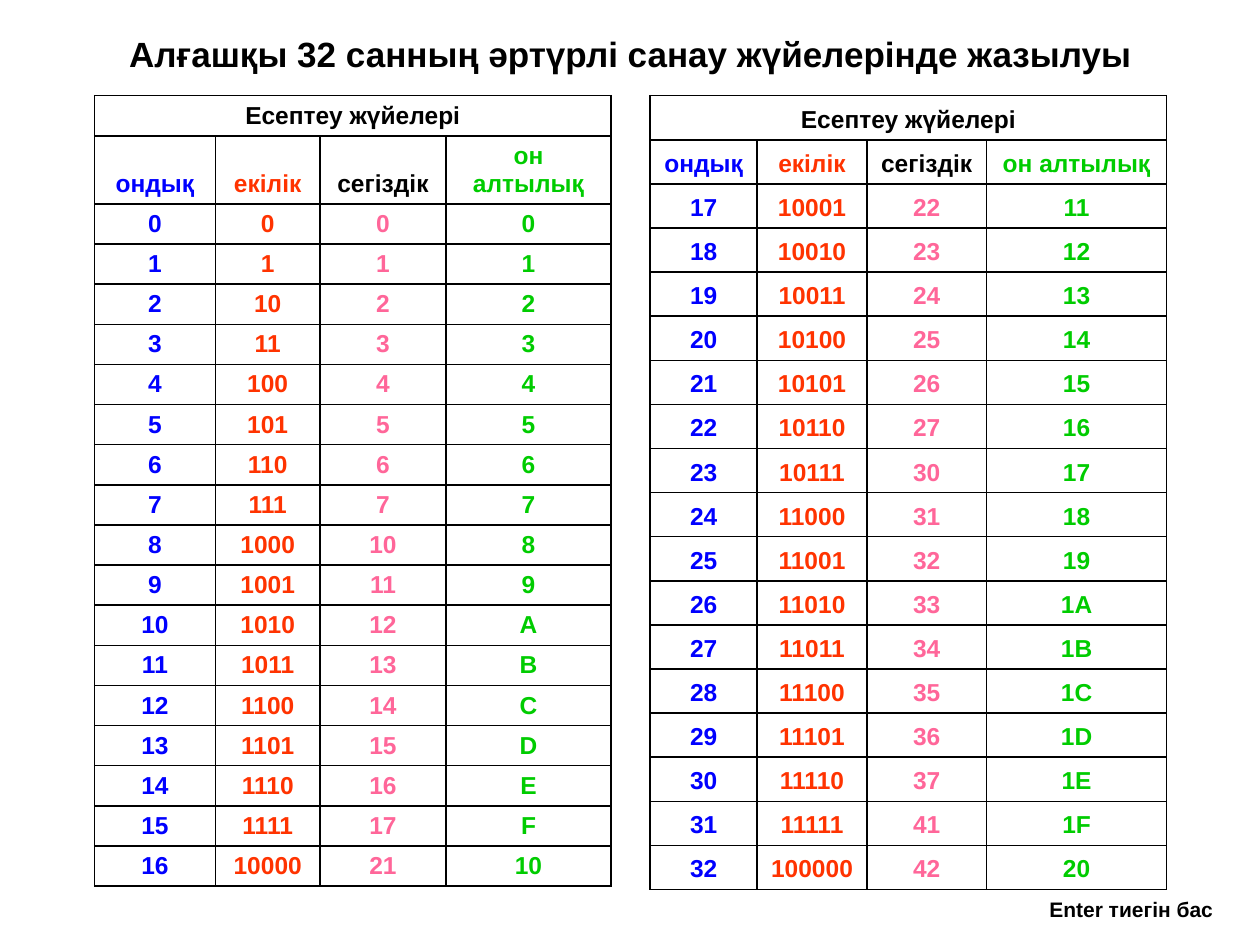
from dataclasses import dataclass

import pptx
import pptx.dml.color
import pptx.enum.text
import pptx.oxml
import pptx.oxml.ns
import pptx.util

Inches = pptx.util.Inches
CENTER = pptx.enum.text.PP_ALIGN.CENTER
LEFT = pptx.enum.text.PP_ALIGN.LEFT
BOTTOM = pptx.enum.text.MSO_ANCHOR.BOTTOM


@dataclass(frozen=True)
class Theme:
    font: str = "Arial"
    ink: str = "000000"
    decimal: str = "0000FF"
    binary: str = "FF3300"
    octal: str = "FF6699"
    hexadecimal: str = "00CC00"
    title_size: int = 20
    table_size: int = 14
    note_size: int = 12
    border_width: int = 1


TABLE_TITLE = "Есептеу жүйелері"
HEADINGS = ["ондық", "екілік", "сегіздік", "он алтылық"]
# From 16 on the octal column does not follow the arithmetic, so it is listed.
OCTALS = [format(number, "o") for number in range(16)] + (
    "21 22 23 24 25 26 27 30 31 32 33 34 35 36 37 41 42".split()
)


def number_row(number):
    return [str(number), format(number, "b"), OCTALS[number], format(number, "X")]


class SlideBuilder:
    def __init__(self, slide, theme):
        self.slide = slide
        self.theme = theme

    def styled_run(self, text_frame, text, size, color, alignment):
        paragraph = text_frame.paragraphs[0]
        paragraph.alignment = alignment
        run = paragraph.add_run()
        run.text = text
        format_values = {
            "name": self.theme.font,
            "size": pptx.util.Pt(size),
            "bold": True,
        }
        for name, value in format_values.items():
            setattr(run.font, name, value)
        run.font.color.rgb = pptx.dml.color.RGBColor.from_string(color)

    def text(self, text, left, top, width, height, size, alignment, wrap):
        shape = self.slide.shapes.add_textbox(
            Inches(left), Inches(top), Inches(width), Inches(height)
        )
        shape.text_frame.word_wrap = wrap
        self.styled_run(shape.text_frame, text, size, self.theme.ink, alignment)

    def borders(self, cell):
        properties = cell._tc.get_or_add_tcPr()
        width = pptx.util.Pt(self.theme.border_width)
        for side in ("lnL", "lnR", "lnT", "lnB"):
            properties.append(pptx.oxml.parse_xml(
                f'<a:{side} {pptx.oxml.ns.nsdecls("a")} w="{width}"><a:solidFill>'
                f'<a:srgbClr val="{self.theme.ink}"/></a:solidFill></a:{side}>'
            ))

    def cell(self, cell, text, color):
        format_values = {
            "margin_top": Inches(0.04),
            "margin_bottom": Inches(0.05),
            "vertical_anchor": BOTTOM,
        }
        for name, value in format_values.items():
            setattr(cell, name, value)
        self.borders(cell)
        cell.fill.background()
        if text:
            self.styled_run(
                cell.text_frame, text, self.theme.table_size, color, CENTER
            )

    def number_table(self, numbers, left, top, widths, height, heading_height=None):
        """Rows share the height equally, apart from a fixed heading height."""
        rows = [[TABLE_TITLE, "", "", ""], HEADINGS]
        rows += [number_row(number) for number in numbers]
        table = self.slide.shapes.add_table(
            len(rows), len(widths),
            Inches(left), Inches(top), Inches(sum(widths)), Inches(height),
        ).table
        table.first_row = table.horz_banding = False
        for column, width in zip(table.columns, widths):
            column.width = Inches(width)

        if heading_height:
            row_height = (height - heading_height) / (len(rows) - 1)
        else:
            row_height = height / len(rows)
        for row in table.rows:
            row.height = Inches(row_height)
        table.rows[1].height = Inches(heading_height or row_height)

        theme = self.theme
        number_colors = [theme.decimal, theme.binary, theme.octal, theme.hexadecimal]
        heading_colors = [theme.decimal, theme.binary, theme.ink, theme.hexadecimal]
        row_colors = [[theme.ink] * 4, heading_colors]
        row_colors += [number_colors] * len(numbers)
        table.cell(0, 0).merge(table.cell(0, len(widths) - 1))
        for row, texts, colors in zip(table.rows, rows, row_colors):
            for cell, text, color in zip(row.cells, texts, colors):
                self.cell(cell, text, color)


def main():
    presentation = pptx.Presentation()
    presentation.slide_width = Inches(10)
    presentation.slide_height = Inches(7.5)
    slide = presentation.slides.add_slide(presentation.slide_layouts[6])
    theme = Theme()
    builder = SlideBuilder(slide, theme)

    builder.number_table(
        range(17), 0.75, 0.76, [0.96, 0.83, 1, 1.31], 6.28, heading_height=0.54
    )
    builder.number_table(range(17, 33), 5.16, 0.76, [0.85, 0.87, 0.95, 1.43], 6.3)
    builder.text(
        "Алғашқы 32 санның әртүрлі санау жүйелерінде жазылуы",
        0.83, 0.21, 8.35, 0.43, theme.title_size, CENTER, wrap=True,
    )
    builder.text(
        "Enter тиегін бас", 8.23, 7.07, 1.65, 0.3, theme.note_size, LEFT, wrap=False
    )
    presentation.save("out.pptx")


if __name__ == "__main__":
    main()
